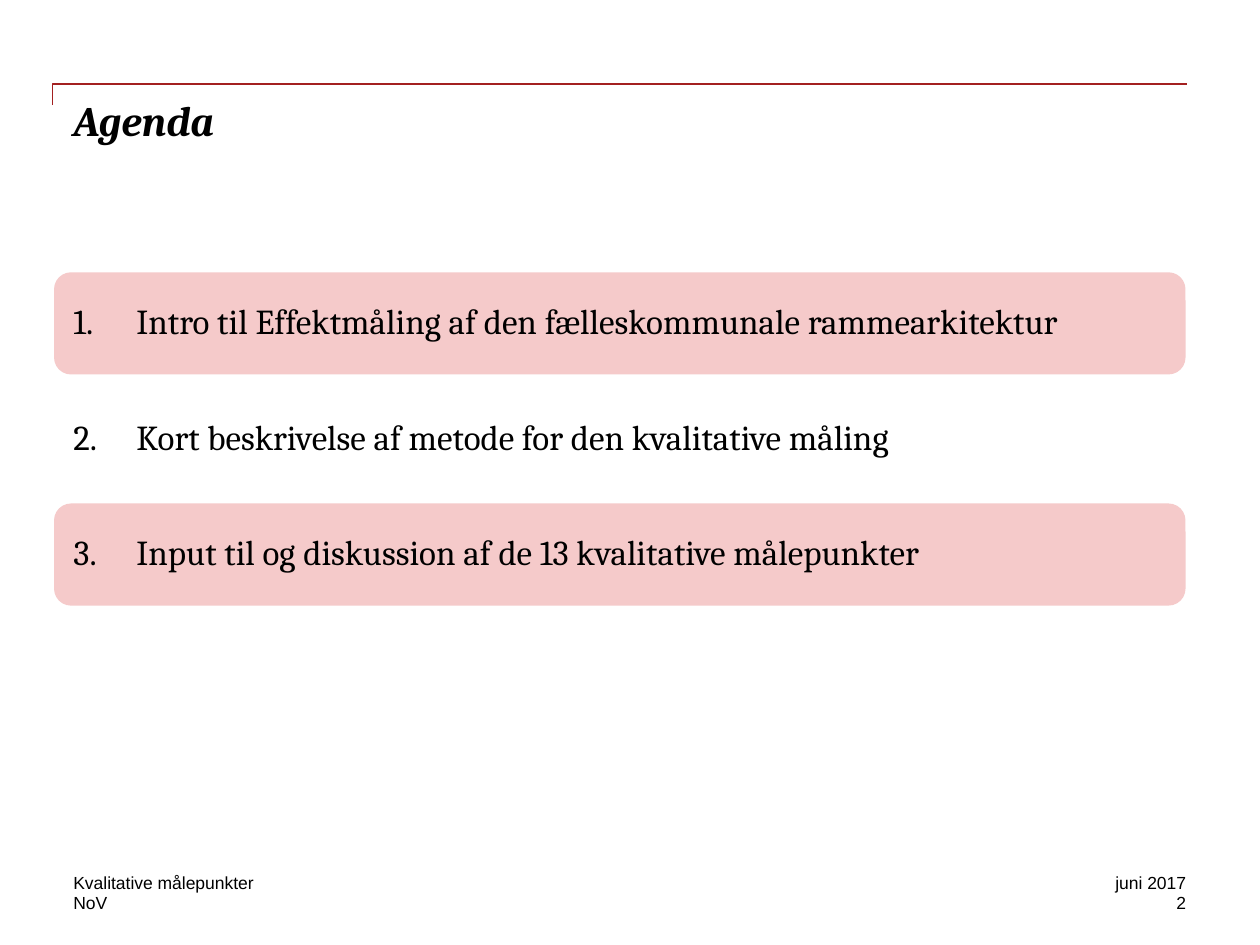
from lxml.etree import SubElement
from pptx import Presentation
from pptx.dml.color import RGBColor
from pptx.enum.shapes import MSO_SHAPE
from pptx.enum.text import MSO_ANCHOR, PP_ALIGN
from pptx.oxml.ns import qn
from pptx.util import Cm, Pt

RED, PINK, BLACK = "A32020", "F5CACA", "000000"
SERIF, SANS = "Cambria", "Arial"

TEXT_LEFT, TEXT_WIDTH = 1.48, 22.43
ITEM_PITCH = 2.33
BAND_TOP = 5.49

AGENDA = [
    "Intro til Effektmåling af den fælleskommunale rammearkitektur",
    "Kort beskrivelse af metode for den kvalitative måling",
    "Input til og diskussion af de 13 kvalitative målepunkter",
]


def color(hex_code):
    return RGBColor.from_string(hex_code)


def place(shape, left, top, width, height):
    shape.left, shape.top = Cm(left), Cm(top)
    shape.width, shape.height = Cm(width), Cm(height)


def number_paragraph(paragraph, indent):
    """Give the paragraph automatic numbering with a hanging indent."""
    properties = paragraph._p.get_or_add_pPr()
    properties.set("marL", str(Cm(indent)))
    properties.set("indent", str(-Cm(indent)))
    SubElement(properties, qn("a:buFont"), typeface="+mj-lt")
    SubElement(properties, qn("a:buAutoNum"), type="arabicPeriod")


def write_text(shape, lines, font=SANS, size=10, bold=False, italic=False,
               align=PP_ALIGN.LEFT, anchor=MSO_ANCHOR.TOP, gap=0, number_indent=None):
    frame = shape.text_frame
    frame.word_wrap = True
    frame.vertical_anchor = anchor
    frame.margin_left = frame.margin_right = frame.margin_top = frame.margin_bottom = 0
    frame.text = "\n".join(lines)
    for index, paragraph in enumerate(frame.paragraphs):
        paragraph.alignment = align
        if index:
            paragraph.space_before = Pt(gap)
        if number_indent:
            number_paragraph(paragraph, number_indent)
        for run in paragraph.runs:
            run.font.name, run.font.size = font, Pt(size)
            run.font.bold, run.font.italic = bold, italic
            run.font.color.rgb = color(BLACK)


def add_text(slide, lines, left, top, width, height, **text_format):
    box = slide.shapes.add_textbox(Cm(left), Cm(top), Cm(width), Cm(height))
    write_text(box, lines, **text_format)


def add_corner_rule(slide):
    """Draw the rule above the title with its short drop at the left."""
    builder = slide.shapes.build_freeform(Cm(1.06), Cm(2.12))
    builder.add_line_segments([(Cm(1.06), Cm(1.69)), (Cm(23.92), Cm(1.69))], close=False)
    rule = builder.convert_to_shape()
    rule.shadow.inherit = False
    rule.fill.background()
    rule.line.color.rgb = color(RED)
    rule.line.width = Pt(1)


def add_band(slide, top):
    band = slide.shapes.add_shape(
        MSO_SHAPE.ROUNDED_RECTANGLE, Cm(1.09), Cm(top), Cm(22.81), Cm(2.06))
    band.shadow.inherit = False
    band.fill.solid()
    band.fill.fore_color.rgb = color(PINK)
    band.line.fill.background()


def add_title(slide, text):
    title = slide.shapes.title
    place(title, TEXT_LEFT, 1.9, TEXT_WIDTH, 2.54)
    write_text(title, [text], font=SERIF, size=24, bold=True, italic=True)


def add_agenda(slide):
    for index in range(0, len(AGENDA), 2):
        add_band(slide, BAND_TOP + index * ITEM_PITCH)
    add_text(slide, AGENDA, TEXT_LEFT, 6.04, TEXT_WIDTH, 6.5,
             font=SERIF, size=20, gap=42, number_indent=1.27)


def add_footer(slide):
    rows = [("Kvalitative målepunkter", "juni 2017"), ("NoV", "2")]
    for index, (left_text, right_text) in enumerate(rows):
        top = 17.57 + index * 0.42
        add_text(slide, [left_text], TEXT_LEFT, top, 14.6, 0.42)
        add_text(slide, [right_text], 19.68, top, 4.23, 0.42, align=PP_ALIGN.RIGHT)


def main():
    presentation = Presentation()
    presentation.slide_width, presentation.slide_height = Cm(25.4), Cm(19.05)
    slide = presentation.slides.add_slide(presentation.slide_layouts[5])
    add_corner_rule(slide)
    add_title(slide, "Agenda")
    add_agenda(slide)
    add_footer(slide)
    presentation.save("out.pptx")


if __name__ == "__main__":
    main()
